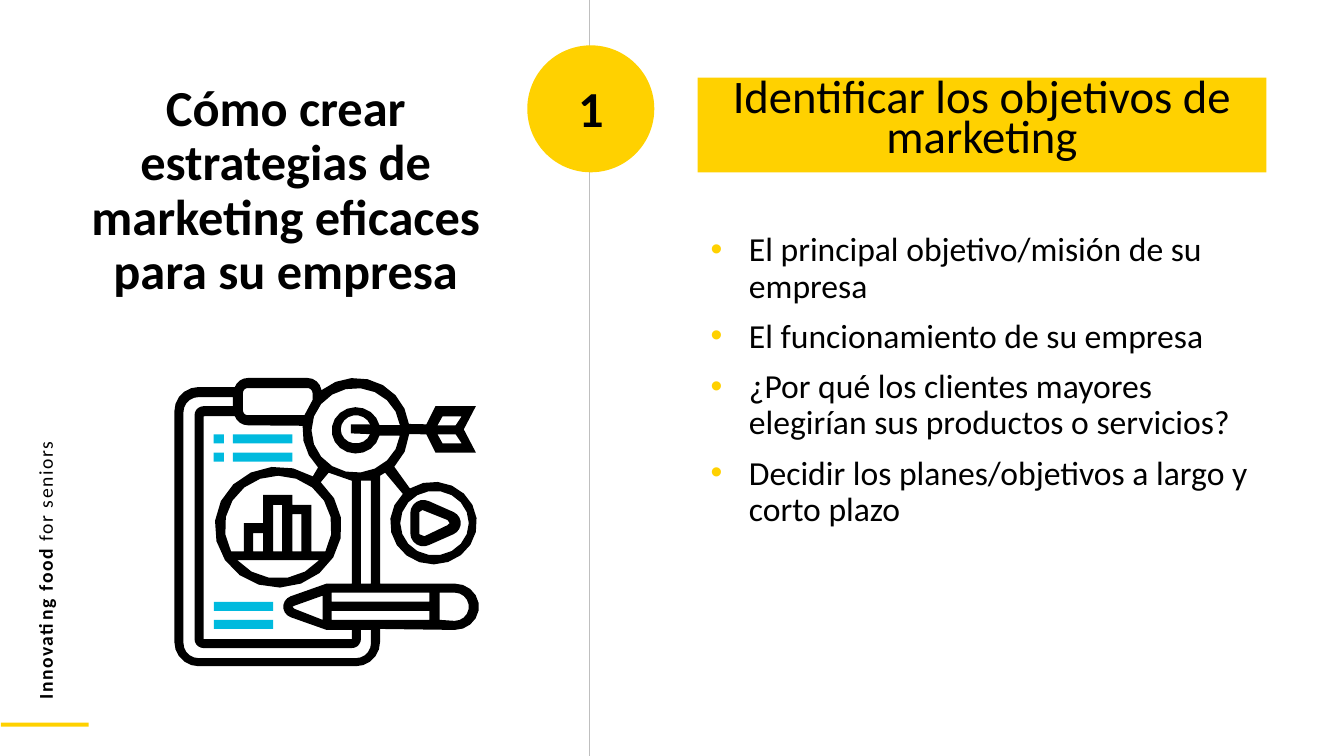
from math import ceil, cos, radians, sin
from lxml import etree
from pptx import Presentation
from pptx.dml.color import RGBColor
from pptx.enum.shapes import MSO_CONNECTOR as CONN, MSO_SHAPE as SHAPE
from pptx.enum.text import MSO_ANCHOR as ANCHOR, MSO_AUTO_SIZE as AUTO, PP_ALIGN as ALIGN
from pptx.oxml.ns import qn
from pptx.util import Inches, Pt

# Content
TITLE = "Cómo crear estrategias de marketing eficaces para su empresa"
NUMBER = "1"
HEADER = "Identificar los objetivos de marketing"
POINTS = [
    "El principal objetivo/misión de su empresa",
    "El funcionamiento de su empresa",
    "¿Por qué los clientes mayores elegirían sus productos o servicios?",
    "Decidir los planes/objetivos a largo y corto plazo",
]
TAGLINE = [("Innovating food ", True), ("for seniors", False)]

COLORS = {"gold": "FFD100", "black": "000000", "blue": "00BADE", "grey": "BFBFBF"}
FONT = "Calibri"
STEP = 20

# Blue dashes of the icon: left, top, width
DASHES = [(2.12, 4.31, 0.1), (2.31, 4.31, 0.59), (2.12, 4.49, 0.1),
          (2.31, 4.49, 0.59), (2.12, 5.97, 0.59), (2.12, 6.15, 0.59)]


# Outline parts, in inches and degrees
def arc(x, y, rx, ry, start, end):
    count = ceil(abs(end - start) / STEP)
    turns = [radians(start + (end - start) * i / count) for i in range(count + 1)]
    return [(x + rx * cos(a), y + ry * sin(a)) for a in turns]


def bend(x, y, r, start, end):
    return arc(x, y, r, r, start, end)


def rect(x1, y1, x2, y2):
    return [(x1, y1), (x2, y1), (x2, y2), (x1, y2)]


def hub(rx, ry, start, end):
    return arc(3.53, 4.27, rx, ry, start, end)


def disc(rx, ry, start, end):
    return arc(2.76, 5.23, rx, ry, start, end)


VANE = [(4.39, 4.13), (4.58, 4.13), (4.52, 4.22), (4.34, 4.22)]
SHELL = [
    (4.51, 5.79), (3.77, 5.79), (3.77, 4.72), (3.82, 4.69),
    *arc(4.3, 5.19, 0.43, 0.41, 225, -123), *hub(0.53, 0.52, 44, 4),
    (4.23, 4.31), (4.32, 4.49), (4.72, 4.49), (4.6, 4.26),
    (4.72, 4.03), (4.32, 4.03), (4.23, 4.21), *hub(0.53, 0.52, -7, -130),
    *bend(3.05, 3.89, 0.14, -10, -90), *bend(2.46, 3.89, 0.14, -90, -160),
    *bend(1.97, 4.08, 0.24, -90, -180), *bend(1.97, 6.37, 0.24, 180, 90),
    *bend(3.53, 6.37, 0.24, 90, 0), (3.77, 6.24),
    *arc(4.51, 6.02, 0.24, 0.23, 90, -90)]
PAGE = [
    *bend(2.46, 4.08, 0.14, 160, 90), *hub(0.53, 0.52, 185, 135),
    *disc(0.63, 0.6, -57, -408), (3.26, 4.69), (3.49, 4.77), (3.49, 5.79),
    (3.24, 5.79), *bend(2.92, 6.02, 0.11, 250, 110), (3.24, 6.25),
    (3.49, 6.25), (3.49, 6.34), (2.02, 6.34), (2.02, 4.13)]
CHART = [
    (3.09, 5.47), (3.09, 5.01), (2.9, 5.01), (2.9, 4.91), (2.61, 4.91),
    (2.61, 5.19), (2.42, 5.19), (2.42, 5.47), *disc(0.53, 0.51, 152, 388)]
CLIP = [
    *bend(2.46, 3.9, 0.05, 180, 270), *bend(3.05, 3.9, 0.05, 270, 360),
    (3.1, 3.97), (3.02, 4.12), *bend(2.46, 4.07, 0.05, 90, 180)]
BOARD = [
    *bend(3.53, 6.38, 0.15, 0, 90), *bend(1.97, 6.38, 0.15, 90, 180),
    *bend(1.97, 4.09, 0.15, 180, 270), (2.31, 3.94), (2.31, 4.03),
    *bend(2.02, 4.12, 0.09, 270, 180), *bend(2.02, 6.34, 0.09, 180, 90),
    *bend(3.49, 6.34, 0.09, 90, 0), (3.58, 6.25), (3.68, 6.25)]
ICON = [
    SHELL, PAGE, CHART, CLIP, BOARD, VANE, [(x, 8.53 - y) for x, y in VANE],
    arc(4.31, 5.19, 0.34, 0.32, 0, 360),
    hub(0.44, 0.42, -7, -353) + hub(0.24, 0.23, 13, 347),
    arc(3.53, 4.26, 0.15, 0.14, 20, 340) + [(3.48, 4.21), (3.48, 4.3)],
    disc(0.53, 0.51, 40, 140),
    rect(2.51, 5.29, 2.61, 5.47), rect(2.71, 5.01, 2.8, 5.47),
    rect(2.9, 5.1, 2.99, 5.47), rect(3.58, 4.77, 3.68, 5.79),
    rect(3.29, 5.88, 4.26, 5.97), rect(3.29, 6.06, 4.26, 6.15),
    [(3.2, 5.91), (3.2, 6.15), (2.92, 6.04), (2.9, 6.02), (2.92, 6.01)],
    bend(4.51, 6.02, 0.14, -90, 90) + [(4.36, 6.15), (4.36, 5.88)]]
PLAY = [
    [*bend(4.2, 5.09, 0.13, 180, 296), *bend(4.45, 5.19, 0.12, -65, 65),
     *bend(4.2, 5.29, 0.13, 64, 180)],
    [(4.16, 5.08), (4.19, 5.06), (4.44, 5.16), (4.46, 5.19), (4.44, 5.21),
     (4.21, 5.32), (4.16, 5.3)]]

prs = Presentation()
prs.slide_width, prs.slide_height = Inches(13.33), Inches(7.5)
slide = prs.slides.add_slide(prs.slide_layouts[5])
shapes = slide.shapes


def color(name):
    return RGBColor.from_string(COLORS[name])


def paint(shape, fill):
    shape.shadow.inherit = False
    shape.fill.solid()
    shape.fill.fore_color.rgb = color(fill)
    shape.line.fill.background()
    return shape


def add(kind, x, y, w, h, fill):
    return paint(shapes.add_shape(kind, Inches(x), Inches(y), Inches(w), Inches(h)), fill)


def trace(loops, fill):
    pen = None
    for loop in loops:
        first, *rest = [(Inches(x), Inches(y)) for x, y in loop]
        if pen:
            pen.move_to(*first)
        else:
            pen = shapes.build_freeform(*first)
        pen.add_line_segments(rest, close=True)
    return paint(pen.convert_to_shape(), fill)


def style(font, size, bold=False):
    font.name, font.size, font.bold = FONT, Pt(size), bold
    font.color.rgb = color("black")


def write(shape, text, size, bold=False, space=0.9, anchor=ANCHOR.TOP):
    frame = shape.text_frame
    frame.word_wrap = True
    frame.auto_size = AUTO.NONE
    frame.vertical_anchor = anchor
    frame.text = text
    para = frame.paragraphs[0]
    para.alignment, para.line_spacing = ALIGN.CENTER, space
    style(para.runs[0].font, size, bold)


def box(x, y, w, h):
    return shapes.add_textbox(Inches(x), Inches(y), Inches(w), Inches(h))


# Divider, number and footer bar
rule = shapes.add_connector(CONN.STRAIGHT, Inches(5.85), 0, Inches(5.85), Inches(7.5))
rule.line.color.rgb = color("grey")
rule.line.width = Pt(0.5)
etree.SubElement(rule._element.spPr, qn("a:effectLst"))
badge = add(SHAPE.OVAL, 5.23, 0.45, 1.26, 1.26, "gold")
write(badge, NUMBER, 36, True, anchor=ANCHOR.MIDDLE)
badge.text_frame.margin_top = Inches(0.09)
add(SHAPE.RECTANGLE, 0.01, 7.17, 0.87, 0.04, "gold")

# Title and header
title = shapes.title
title.left, title.top = Inches(0.65), Inches(0.77)
title.width, title.height = Inches(4.37), Inches(3.76)
write(title, TITLE, 36, True)
band = add(SHAPE.RECTANGLE, 6.92, 0.77, 5.64, 0.94, "gold")
write(band, HEADER, 33.3, space=0.7)

# Vertical tagline
side = box(-3.32, 3.1, 7.54, 0.34)
side.rotation = 270
side.text_frame.word_wrap = True
for text, bold in TAGLINE:
    run = side.text_frame.paragraphs[0].add_run()
    run.text = text
    style(run.font, 14, bold)
    run._r.get_or_add_rPr().set("spc", "110")

# Bullets
frame = box(6.95, 2.26, 5.61, 4.07).text_frame
frame.word_wrap = True
frame.text = "\n".join(POINTS)
for i, para in enumerate(frame.paragraphs):
    para.line_spacing = 0.9
    para.space_before = Pt(10 if i else 0)
    props = para._p.get_or_add_pPr()
    props.set("marL", str(Inches(0.38)))
    props.set("indent", str(-Inches(0.38)))
    tint = etree.SubElement(props, qn("a:buClr"))
    etree.SubElement(tint, qn("a:srgbClr"), val=COLORS["gold"])
    etree.SubElement(props, qn("a:buFont"), typeface="Arial")
    etree.SubElement(props, qn("a:buChar"), char="•")
    style(para.runs[0].font, 24)

# Icon
trace(ICON, "black")
trace(PLAY, "black")
for x, y, w in DASHES:
    add(SHAPE.RECTANGLE, x, y, w, 0.09, "blue")

prs.save("out.pptx")
